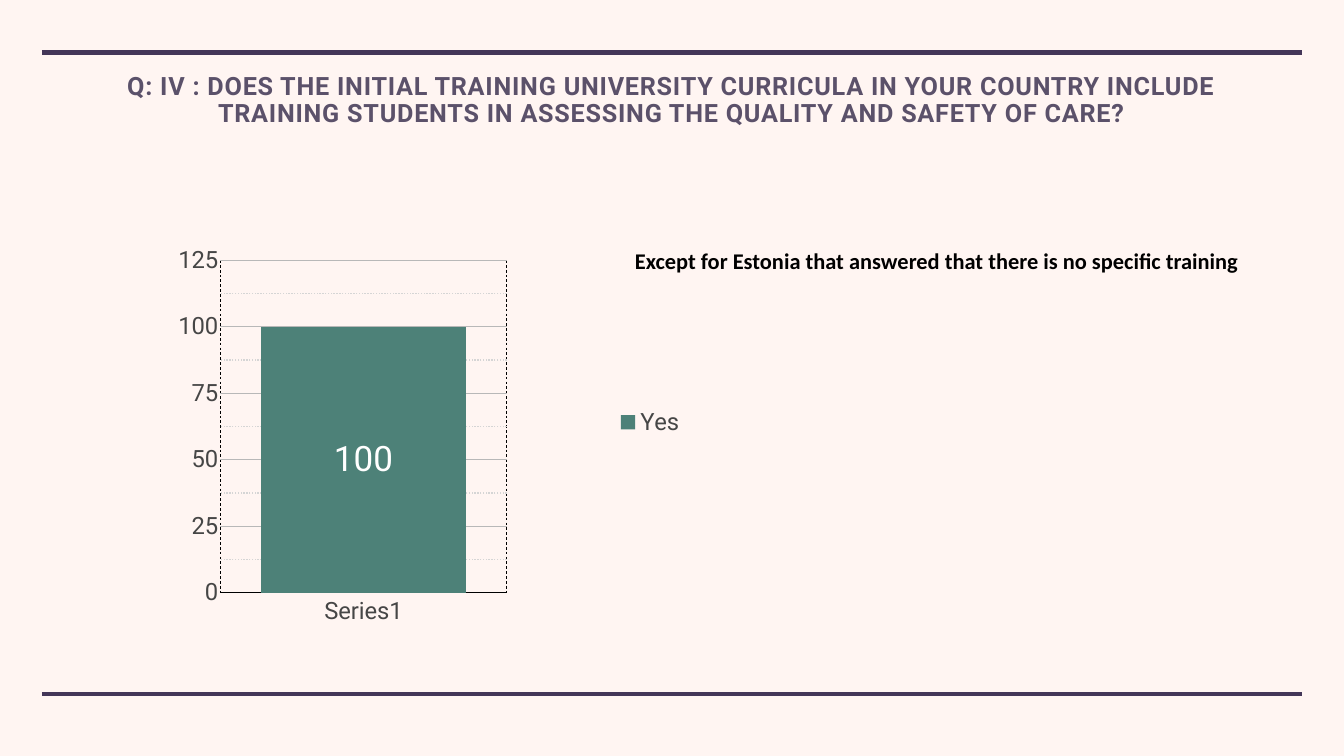
import pptx
import pptx.chart.data
import pptx.dml.color
import pptx.enum.chart
import pptx.enum.dml
import pptx.enum.shapes
import pptx.enum.text
import pptx.oxml
import pptx.oxml.ns
import pptx.util

Pt = pptx.util.Pt
RGBColor = pptx.dml.color.RGBColor

BACKGROUND = RGBColor(0xFF, 0xF5, 0xF2)
RULE = RGBColor(0x44, 0x36, 0x58)
TITLE = RGBColor(0x5B, 0x51, 0x6A)
BLACK = RGBColor(0, 0, 0)
WHITE = RGBColor(0xFF, 0xFF, 0xFF)
BAR = RGBColor(0x4D, 0x81, 0x78)
AXIS_TEXT = RGBColor(0x46, 0x46, 0x46)
MAJOR_GRID = RGBColor(0xB8, 0xB8, 0xB8)
MINOR_GRID = RGBColor(0xD5, 0xD5, 0xD5)

QUESTION = ("Q: IV : DOES THE INITIAL TRAINING UNIVERSITY CURRICULA IN YOUR COUNTRY INCLUDE "
            "TRAINING STUDENTS IN ASSESSING THE QUALITY AND SAFETY OF CARE?")
REMARK = "Except for Estonia that answered that there is no specific training"


def style_font(font, size, color, name="Roboto", bold=False):
    font.size, font.name, font.bold = Pt(size), name, bold
    font.color.rgb = color


def style_line(line, color, width):
    line.color.rgb = color
    line.width = Pt(width)


def add_rule(slide, y):
    rule = slide.shapes.add_connector(
        pptx.enum.shapes.MSO_CONNECTOR.STRAIGHT, Pt(60), Pt(y), Pt(1860), Pt(y))
    style_line(rule.line, RULE, 6)
    rule._element.spPr.append(pptx.oxml.parse_xml(
        f'<a:effectLst {pptx.oxml.ns.nsdecls("a")}/>'))


def write_text(frame, text, spacing):
    """Fill a text frame with one run and return its paragraph and run."""
    frame.margin_left = frame.margin_right = Pt(4)
    frame.margin_top = frame.margin_bottom = Pt(4)
    paragraph = frame.paragraphs[0]
    paragraph.line_spacing = spacing
    run = paragraph.add_run()
    run.text = text
    return paragraph, run


def add_title(slide):
    title = slide.shapes.title
    title.left, title.top, title.width, title.height = Pt(164), Pt(101), Pt(1591), Pt(130)
    frame = title.text_frame
    frame.word_wrap = True
    frame.auto_size = pptx.enum.text.MSO_AUTO_SIZE.NONE
    frame.vertical_anchor = pptx.enum.text.MSO_ANCHOR.TOP
    paragraph, run = write_text(frame, QUESTION, 0.9)
    paragraph.alignment = pptx.enum.text.PP_ALIGN.CENTER
    style_font(run.font, 36, TITLE, bold=True)
    run.font._element.set("spc", "110")


def add_remark(slide):
    frame = slide.shapes.add_textbox(Pt(903), Pt(346), Pt(878), Pt(47)).text_frame
    frame.word_wrap = False
    frame.auto_size = pptx.enum.text.MSO_AUTO_SIZE.SHAPE_TO_FIT_TEXT
    frame.vertical_anchor = pptx.enum.text.MSO_ANCHOR.MIDDLE
    paragraph, run = write_text(frame, REMARK, 1.15)
    paragraph.space_before = Pt(10)
    style_font(run.font, 32, BLACK, "Calibri", True)


def place(part, index, x, y, w, h, target=""):
    """Give a chart part a fixed place, in fractions of the chart."""
    for old in part.findall(pptx.oxml.ns.qn("c:layout")):
        part.remove(old)
    part.insert(index, pptx.oxml.parse_xml(
        f'<c:layout {pptx.oxml.ns.nsdecls("c")}><c:manualLayout>{target}'
        '<c:xMode val="edge"/><c:yMode val="edge"/>'
        f'<c:x val="{x}"/><c:y val="{y}"/><c:w val="{w}"/><c:h val="{h}"/>'
        '</c:manualLayout></c:layout>'))


def style_minor_gridlines(axis, color, width):
    """Dot the minor gridlines, which have no public format object."""
    axis.has_minor_gridlines = True
    gridlines = axis._element.find(pptx.oxml.ns.qn("c:minorGridlines"))
    gridlines.append(pptx.oxml.parse_xml(
        f'<c:spPr {pptx.oxml.ns.nsdecls("c", "a")}><a:ln w="{Pt(width)}">'
        f'<a:solidFill><a:srgbClr val="{color}"/></a:solidFill>'
        '<a:prstDash val="sysDot"/></a:ln></c:spPr>'))


def style_axes(chart):
    for axis in (chart.category_axis, chart.value_axis):
        axis.major_tick_mark = axis.minor_tick_mark = pptx.enum.chart.XL_TICK_MARK.NONE
        axis.has_major_gridlines = True
        style_font(axis.tick_labels.font, 34, AXIS_TEXT)

    categories, values = chart.category_axis, chart.value_axis
    categories.tick_label_position = pptx.enum.chart.XL_TICK_LABEL_POSITION.LOW
    style_line(categories.format.line, BLACK, 1)
    style_line(categories.major_gridlines.format.line, BLACK, 1)
    categories.major_gridlines.format.line.dash_style = pptx.enum.dml.MSO_LINE.DASH

    values.minimum_scale, values.maximum_scale = 0, 125
    values.major_unit, values.minor_unit = 25, 12.5
    values.format.line.fill.background()
    style_line(values.major_gridlines.format.line, MAJOR_GRID, 0.75)
    style_minor_gridlines(values, MINOR_GRID, 2)


def add_answer_chart(slide):
    answers = pptx.chart.data.CategoryChartData()
    answers.categories = ["Series1"]
    answers.add_series("Yes", [100])
    chart = slide.shapes.add_chart(
        pptx.enum.chart.XL_CHART_TYPE.COLUMN_STACKED,
        Pt(227.5), Pt(324), Pt(871), Pt(594), answers).chart
    chart.has_title = False
    chart.font.name = "Roboto"
    style_axes(chart)

    # Bar and its label
    plot = chart.plots[0]
    plot.gap_width, plot.overlap, plot.vary_by_categories = 40, 100, False
    bar = plot.series[0]
    bar.format.fill.solid()
    bar.format.fill.fore_color.rgb = BAR
    labels = bar.data_labels
    labels.show_value = True
    labels.number_format, labels.number_format_is_linked = "#,##0", False
    labels.position = pptx.enum.chart.XL_LABEL_POSITION.CENTER
    style_font(labels.font, 50, WHITE)

    # Legend and plot positions
    chart.has_legend = True
    legend = chart.legend
    legend.position = pptx.enum.chart.XL_LEGEND_POSITION.RIGHT
    legend.include_in_layout = True
    style_font(legend.font, 34, AXIS_TEXT)
    place(legend._element, 1, 0.74, 0.43, 0.13, 0.08)
    place(plot._element.getparent(), 0, 0.1, 0.08, 0.47, 0.8,
          '<c:layoutTarget val="inner"/>')


def main():
    deck = pptx.Presentation()
    deck.slide_width, deck.slide_height = Pt(1920), Pt(1080)
    slide = deck.slides.add_slide(deck.slide_layouts[5])
    slide.background.fill.solid()
    slide.background.fill.fore_color.rgb = BACKGROUND

    # Rules above and below the content
    for y in (75, 992):
        add_rule(slide, y)
    add_title(slide)
    add_answer_chart(slide)
    add_remark(slide)
    deck.save("out.pptx")


if __name__ == "__main__":
    main()
